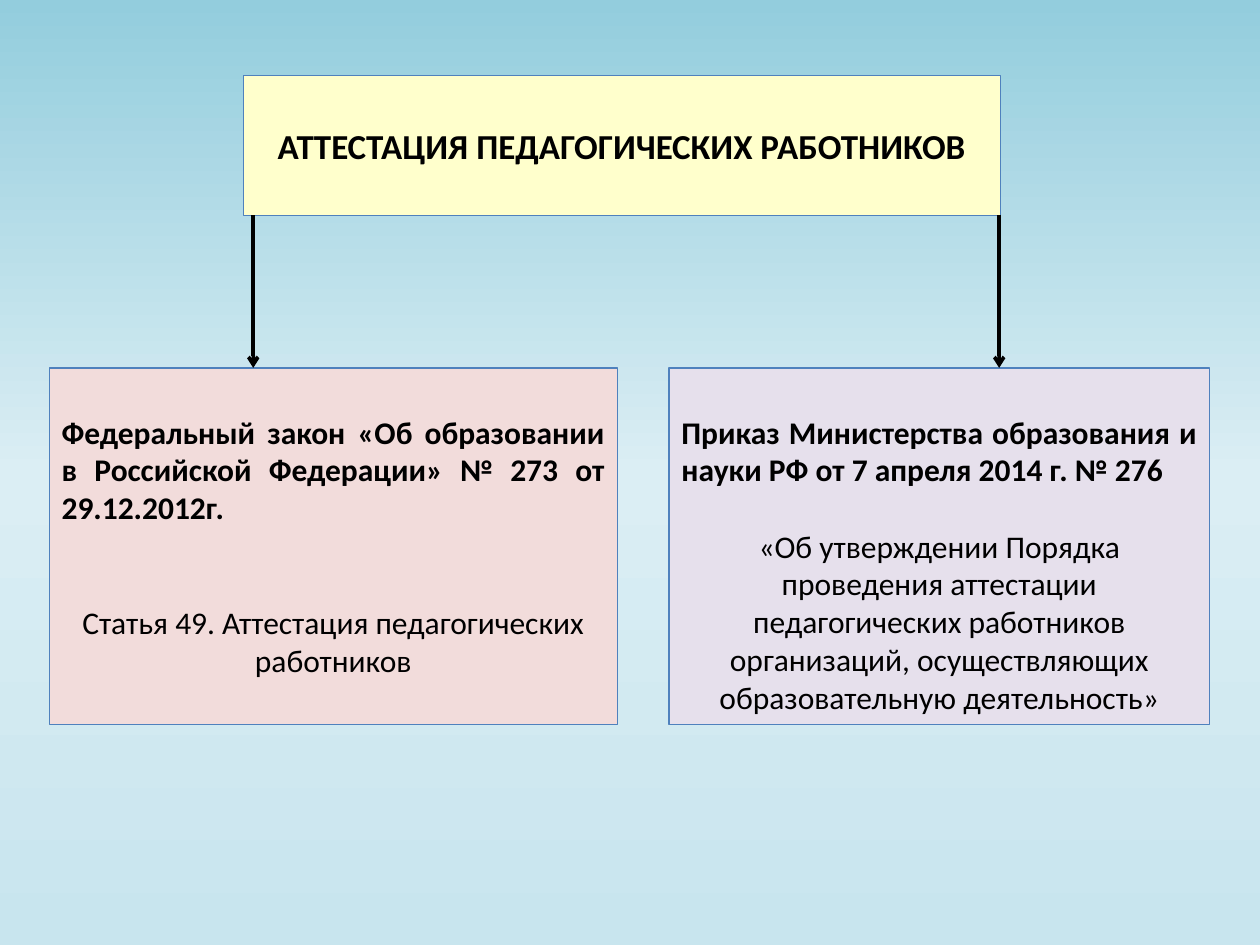
import pptx
import pptx.util
import pptx.dml.color
import pptx.enum.shapes
import pptx.enum.text
import pptx.oxml
import pptx.oxml.ns
from lxml import etree

COLORS = {
    "title": "FFFFCC", "law": "F2DCDB", "order": "E6E0EC",
    "border": "4F81BD", "ink": "000000",
    "sky_top": "93CDDD", "sky_mid": "DBEEF4", "sky_low": "C8E5EE",
}
WIDTH, HEIGHT = 10, 7.5
ALIGN = pptx.enum.text.PP_ALIGN
qn = pptx.oxml.ns.qn


class Board:
    """Style and current slide; the grid has 100 columns and 75 rows."""
    font = "Calibri"
    columns, rows = 100, 75

    def __init__(self, prs):
        self.s = prs.slides.add_slide(prs.slide_layouts[6])

    def x(self, col):
        return pptx.util.Inches(col * WIDTH / self.columns)

    def y(self, row):
        return pptx.util.Inches(row * HEIGHT / self.rows)

    def color(self, name):
        return pptx.dml.color.RGBColor.from_string(COLORS[name])

    def background(self, stops):
        fill = self.s.background.fill
        fill.gradient()
        fill.gradient_angle = 270
        gs_list = next(self.s.element.iter(qn("a:gsLst")))
        for gs in list(gs_list):
            gs_list.remove(gs)
        for percent, name in stops:
            gs = etree.SubElement(gs_list, qn("a:gs"), pos=str(percent * 1000))
            etree.SubElement(gs, qn("a:srgbClr"), val=COLORS[name])

    def box(self, col, row, cols, rows, fill, size, paragraphs):
        """Each paragraph is (text, bold, alignment, lines of space above)."""
        sp = self.s.shapes.add_shape(
            pptx.enum.shapes.MSO_SHAPE.RECTANGLE,
            self.x(col), self.y(row), self.x(cols), self.y(rows))
        sp.shadow.inherit = False
        sp.fill.solid()
        sp.fill.fore_color.rgb = self.color(fill)
        sp.line.color.rgb = self.color("border")
        sp.line.width = pptx.util.Pt(0.75)
        tf = sp.text_frame
        tf.word_wrap = True
        tf.vertical_anchor = pptx.enum.text.MSO_ANCHOR.TOP
        # One line of air above the text
        line = 1.22 * size
        tf.margin_top = pptx.util.Pt(3.6 + line)
        for i, (text, bold, align, gap) in enumerate(paragraphs):
            p = tf.add_paragraph() if i else tf.paragraphs[0]
            p.alignment = align
            p.space_before = pptx.util.Pt(gap * line)
            r = p.add_run()
            r.text = text
            r.font.name = self.font
            r.font.size = pptx.util.Pt(size)
            r.font.bold = bold
            r.font.color.rgb = self.color("ink")

    def down_arrow(self, col, top, bottom):
        line = self.s.shapes.add_connector(
            pptx.enum.shapes.MSO_CONNECTOR.STRAIGHT,
            self.x(col), self.y(top), self.x(col), self.y(bottom))
        line.line.color.rgb = self.color("ink")
        line.line.width = pptx.util.Pt(2)
        etree.SubElement(line.line._get_or_add_ln(), qn("a:tailEnd"), type="arrow")
        etree.SubElement(line.element.spPr, qn("a:effectLst"))


def main():
    prs = pptx.Presentation()
    prs.slide_width = pptx.util.Inches(WIDTH)
    prs.slide_height = pptx.util.Inches(HEIGHT)
    board = Board(prs)
    board.background([(0, "sky_top"), (50, "sky_mid"), (100, "sky_low")])

    # Heading
    title_top, title_rows, body_top, body_rows = 6, 11.1, 29.2, 28.3
    board.box(19.3, title_top, 60.1, title_rows, "title", 20, [
        ("АТТЕСТАЦИЯ ПЕДАГОГИЧЕСКИХ РАБОТНИКОВ", True, ALIGN.CENTER, 0)])

    # Two legal documents
    documents = [
        (3.9, 45.1, "law", 2,
         "Федеральный закон «Об образовании в Российской Федерации» № 273 от 29.12.2012г.",
         "Статья 49. Аттестация педагогических работников"),
        (53.1, 42.9, "order", 1,
         "Приказ Министерства образования и науки РФ от 7 апреля 2014 г. № 276",
         "«Об утверждении Порядка проведения аттестации педагогических работников "
         "организаций, осуществляющих образовательную деятельность»"),
    ]
    for col, cols, fill, gap, name, subject in documents:
        board.box(col, body_top, cols, body_rows, fill, 18, [
            (name, True, ALIGN.JUSTIFY, 0), (subject, False, ALIGN.CENTER, gap)])

    # Arrows from the heading to the documents
    for col in (20.1, 79.3):
        board.down_arrow(col, title_top + title_rows, body_top)

    prs.save("out.pptx")


if __name__ == "__main__":
    main()
